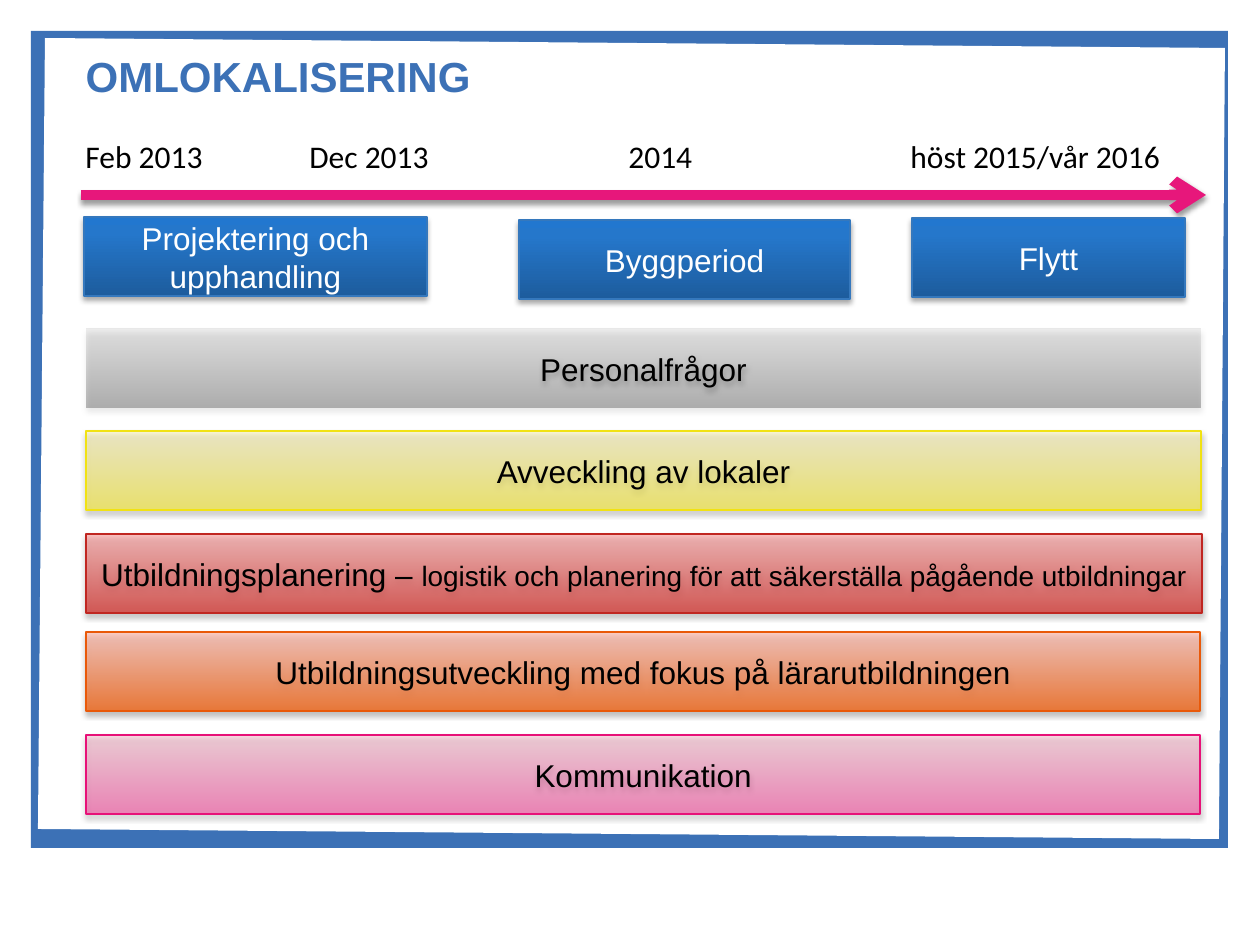
from lxml import etree
from pptx import Presentation
from pptx.dml.color import RGBColor
from pptx.enum.shapes import MSO_CONNECTOR, MSO_SHAPE
from pptx.enum.text import MSO_ANCHOR, MSO_AUTO_SIZE, PP_ALIGN
from pptx.oxml.ns import qn
from pptx.util import Pt

SCALE = 914400 / 126
BLUE = "3C71B6"
PINK = "E7177B"
STAGE_STOPS = [(0, "1D5C9D"), (80, "2577CB"), (100, "2277CF")]
STAGE_LINE = "3578BD"
DATES = [(0, 160, "Feb 2013"), (224, 161, "Dec 2013"),
         (543, 96, "2014"), (825, 297, "höst 2015/vår 2016")]
STAGES = [(11, 217, 343, "Projektering och upphandling"),
          (446, 220, 331, "Byggperiod"), (839, 218, 273, "Flytt")]
TRACKS = [
    (0, 1115, "000000", "BDBDBD", 25, None, [("Personalfrågor", 18)]),
    (102, 1115, "FFEE0B", "FFF6B6", 50, "F1E213", [("Avveckling av lokaler", 18)]),
    (205, 1116, "D7140F", "FFA2A1", 62, "C02621",
     [("Utbildningsplanering – ", 18),
      ("logistik och planering för att säkerställa pågående utbildningar", 16)]),
    (303, 1114, "F85900", "FFBDB2", 70, "E95909",
     [("Utbildningsutveckling med fokus på lärarutbildningen", 18)]),
    (406, 1114, "FE007A", "FFB1C6", 40, "E71178", [("Kommunikation", 18)]),
]


def px(*lengths):
    """Turn pixel lengths into a list of EMU."""
    return [round(length * SCALE) for length in lengths]


def color(code):
    """Turn a hex string into a colour."""
    return RGBColor.from_string(code)


def add_node(parent, tag, **attributes):
    """Append a drawing element with the given attributes."""
    node = etree.SubElement(parent, qn(f"a:{tag}"))
    for name, value in attributes.items():
        node.set(name, str(value))
    return node


def add_color(parent, code, opacity):
    """Append a hex colour with an opacity in percent."""
    node = add_node(parent, "srgbClr", val=code)
    if opacity < 100:
        add_node(node, "alpha", val=opacity * 1000)


def add_shadow(properties, opacity, distance):
    """Append a soft shadow that falls straight down."""
    effects = add_node(properties, "effectLst")
    shadow = add_node(effects, "outerShdw", blurRad=Pt(3.1), dist=Pt(distance),
                      dir=5400000, rotWithShape=0)
    add_color(shadow, "000000", opacity)


def fill_gradient(properties, stops, opacity):
    """Fill a shape from bottom to top through the given stops."""
    gradient = add_node(properties, "gradFill", rotWithShape=1)
    stop_list = add_node(gradient, "gsLst")
    for position, code in stops:
        add_color(add_node(stop_list, "gs", pos=position * 1000), code, opacity)
    add_node(gradient, "lin", ang=16200000, scaled=0)


def write(frame, spans, font="Arial", ink="000000", bold=False,
          align=PP_ALIGN.LEFT, anchor=MSO_ANCHOR.TOP, wrap=True,
          fit=MSO_AUTO_SIZE.NONE):
    """Write (text, size) spans as one paragraph in a text frame."""
    frame.word_wrap = wrap
    frame.auto_size = fit
    frame.vertical_anchor = anchor
    para = frame.paragraphs[0]
    para.alignment = align
    for text, size in spans:
        span = para.add_run()
        span.text = text
        span.font.name = font
        span.font.size = Pt(size)
        span.font.bold = bold
        span.font.color.rgb = color(ink)


def add_block(page, box, stops, spans, line=None, opacity=100, ink="000000"):
    """Add a shaded rectangle with centred text."""
    block = page.shapes.add_shape(MSO_SHAPE.RECTANGLE, *px(*box))
    properties = block._element.spPr
    fill_gradient(properties, stops, opacity)
    if line:
        block.line.color.rgb = color(line)
        block.line.width = Pt(0.75)
    else:
        block.line.fill.background()
    add_shadow(properties, 35, 1.8)
    write(block.text_frame, spans, ink=ink, align=PP_ALIGN.CENTER,
          anchor=MSO_ANCHOR.MIDDLE)


def add_frame(page, left, top, width, height):
    """Add the blue frame with its slanted white panel."""
    border = page.shapes.add_shape(MSO_SHAPE.RECTANGLE, *px(left, top, width, height))
    corners = [(left + 14, top + 7), (left + width - 3, top + 17),
               (left + width - 9, top + height - 9), (left + 7, top + height - 19)]
    builder = page.shapes.build_freeform(*corners[0], scale=SCALE)
    builder.add_line_segments(corners[1:], close=True)
    for shape, code in ((border, BLUE), (builder.convert_to_shape(), "FFFFFF")):
        shape.fill.solid()
        shape.fill.fore_color.rgb = color(code)
        shape.line.fill.background()
        shape.shadow.inherit = False


def add_title(page, left, top, width, height):
    """Place the title in front of the frame."""
    title = page.shapes.title
    title.left, title.top, title.width, title.height = px(left, top, width, height)
    page.shapes._spTree.append(title._element)
    write(title.text_frame, [("OMLOKALISERING", 24)], ink=BLUE, bold=True)


def add_timeline(page, left, top, width):
    """Add the dates, the arrow and the stages below it."""
    arrow = page.shapes.add_connector(
        MSO_CONNECTOR.STRAIGHT,
        *px(left + 8, top + 64, left + width, top + 64))
    arrow.line.color.rgb = color(PINK)
    arrow.line.width = Pt(6)
    add_node(arrow.line._get_or_add_ln(), "tailEnd", type="arrow")
    add_shadow(arrow._element.spPr, 38, 1.6)
    for offset, span_width, text in DATES:
        label = page.shapes.add_textbox(*px(left + offset, top, span_width, 50))
        write(label.text_frame, [(text, 18)], font="Calibri", wrap=False,
              fit=MSO_AUTO_SIZE.SHAPE_TO_FIT_TEXT)
    for offset, stage_top, stage_width, text in STAGES:
        add_block(page, (left + offset, top + stage_top - 131, stage_width, 79),
                  STAGE_STOPS, [(text, 18)], line=STAGE_LINE, ink="FFFFFF")


def add_tracks(page, left, top):
    """Add the stacked bars of parallel work."""
    for offset, width, low, high, opacity, line, spans in TRACKS:
        add_block(page, (left, top + offset, width, 79),
                  [(0, low), (100, high)], spans, line=line, opacity=opacity)


def main():
    """Build the slide and save it."""
    deck = Presentation()
    deck.slide_width, deck.slide_height = px(1260, 945)
    page = deck.slides.add_slide(deck.slide_layouts[5])
    add_frame(page, 31, 31, 1197, 817)
    add_title(page, 73, 44, 804, 95)
    add_timeline(page, 73, 131, 1133)
    add_tracks(page, 86, 329)
    deck.save("out.pptx")


if __name__ == "__main__":
    main()
